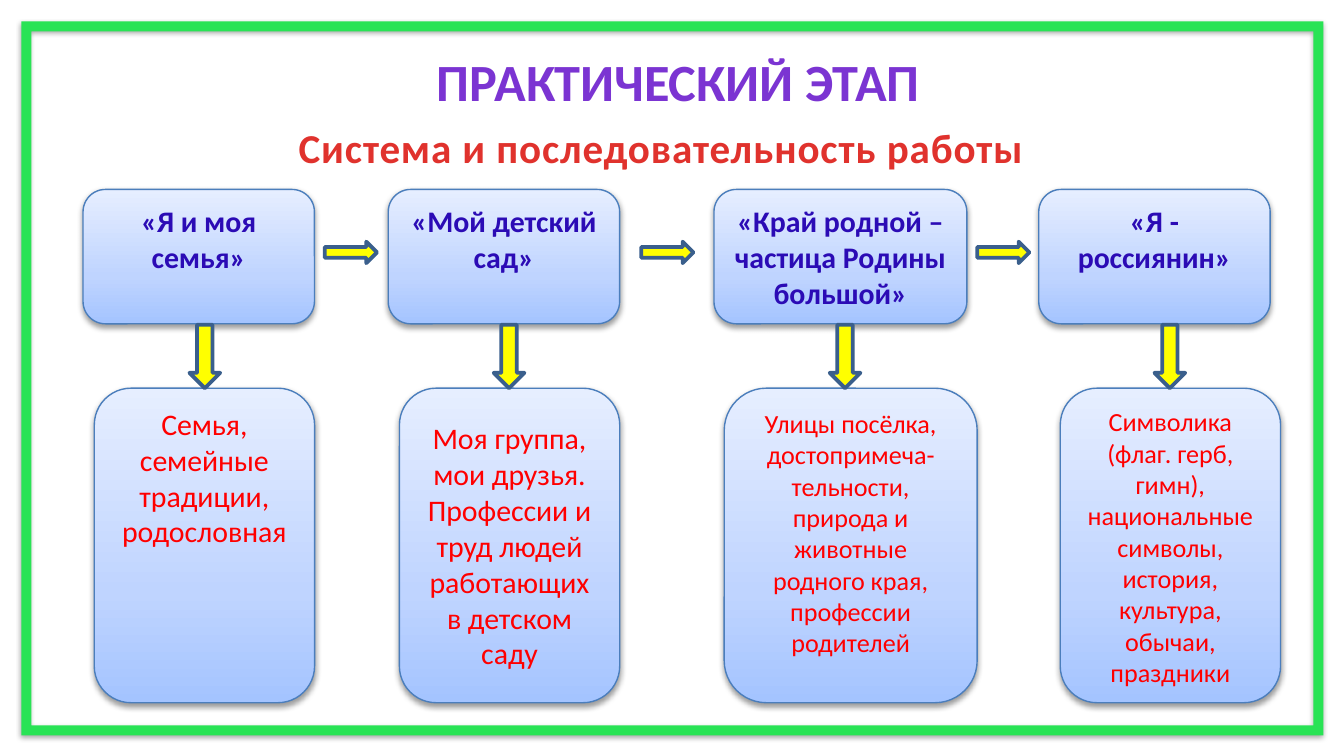
from copy import deepcopy
from dataclasses import dataclass

from lxml.etree import SubElement
from pptx import Presentation
from pptx.dml.color import RGBColor
from pptx.enum.shapes import MSO_SHAPE as Shape
from pptx.enum.text import MSO_ANCHOR as Anchor, MSO_AUTO_SIZE as AutoSize, PP_ALIGN as Align
from pptx.oxml.ns import qn
from pptx.util import Pt

PURPLE = RGBColor(0x7B, 0x34, 0xD2)
CRIMSON = RGBColor(0xE0, 0x32, 0x2D)
GREEN = RGBColor(0x29, 0xE3, 0x55)
INDIGO = RGBColor(0x2B, 0x0B, 0xB5)
RED = RGBColor(0xFF, 0x00, 0x00)
YELLOW = RGBColor(0xFF, 0xFF, 0x00)
ARROW_LINE = RGBColor(0x3A, 0x5F, 0x8C)
CARD_LINE = RGBColor(0x4B, 0x7E, 0xBC)
CARD_STOPS = (
    (0, RGBColor(0xA4, 0xC4, 0xFF)),
    (0.35, RGBColor(0xBF, 0xD4, 0xFF)),
    (1, RGBColor(0xE6, 0xEE, 0xFF)),
)
FONT = "Calibri"

THEME_TOP, THEME_HEIGHT = 101.5, 72
DETAIL_TOP, DETAIL_HEIGHT = 208, 168.5
DOWN_TOP, DOWN_WIDTH, DOWN_HEIGHT = 174, 16.5, 34
NEXT_TOP, NEXT_WIDTH, NEXT_HEIGHT = 129.5, 28, 11.5


@dataclass(frozen=True)
class Area:
    left: float
    top: float
    width: float
    height: float

    def lengths(self) -> tuple:
        return Pt(self.left), Pt(self.top), Pt(self.width), Pt(self.height)


@dataclass(frozen=True)
class Stage:
    theme: str
    theme_left: float
    theme_width: float
    detail: str
    detail_left: float
    detail_width: float
    detail_size: float
    down_left: float
    anchor: Anchor = Anchor.TOP


STAGES = (
    Stage("«Я и моя семья»", 44.5, 124,
          "Семья, семейные традиции, родословная", 50.5, 118, 16, 101.5),
    Stage("«Мой детский сад»", 208, 124,
          "Моя группа, мои друзья. Профессии и труд людей работающих в детском саду",
          214, 118, 16, 264.5, Anchor.MIDDLE),
    Stage("«Край родной – частица Родины большой»", 382.5, 135.5,
          "Улицы посёлка, достопримеча-тельности, природа и животные родного края, "
          "профессии родителей", 388, 135.5, 14, 444.5),
    Stage("«Я - россиянин»", 556.5, 124,
          "Символика (флаг. герб, гимн), национальные символы, история, культура, "
          "обычаи, праздники", 568, 118, 14, 618.5),
)
NEXT_LEFTS = (174, 343.5, 523.5)


def write(box, text: str, size: float, color: RGBColor, bold: bool = False,
          anchor: Anchor = Anchor.TOP):
    """Write one centred paragraph and return its run."""
    frame = box.text_frame
    frame.word_wrap = True
    frame.vertical_anchor = anchor
    para = frame.paragraphs[0]
    para.alignment = Align.CENTER
    span = para.add_run()
    span.text = text
    span.font.name = FONT
    span.font.size = Pt(size)
    span.font.bold = bold
    span.font.color.rgb = color
    return span


def add_shadow(shape, distance: float, opacity: int) -> None:
    shape.shadow.inherit = False
    effects = shape._element.spPr.find(qn("a:effectLst"))
    shadow = SubElement(effects, qn("a:outerShdw"), blurRad=str(Pt(3.1)),
                        dist=str(Pt(distance)), dir="5400000", rotWithShape="0")
    black = SubElement(shadow, qn("a:srgbClr"), val="000000")
    SubElement(black, qn("a:alpha"), val=str(opacity * 1000))


def add_frame(page) -> None:
    frame = page.shapes.add_shape(Shape.FRAME, *Area(11.5, 11.5, 697.5, 382.5).lengths())
    frame.adjustments[0] = 0.014
    frame.fill.solid()
    frame.fill.fore_color.rgb = GREEN
    frame.line.fill.background()
    add_shadow(frame, 1.8, 35)


def add_card(page, area: Area):
    card = page.shapes.add_shape(Shape.ROUNDED_RECTANGLE, *area.lengths())
    card.fill.gradient()
    card.fill.gradient_angle = 90
    stop_list = card._element.spPr.find(qn("a:gradFill")).find(qn("a:gsLst"))
    stop_list.append(deepcopy(stop_list[0]))
    for stop, (position, color) in zip(card.fill.gradient_stops, CARD_STOPS):
        stop.position = position
        stop.color.rgb = color
    card.line.color.rgb = CARD_LINE
    card.line.width = Pt(0.75)
    add_shadow(card, 1.6, 38)
    return card


def add_arrow(page, kind: Shape, area: Area) -> None:
    arrow = page.shapes.add_shape(kind, *area.lengths())
    arrow.shadow.inherit = False
    arrow.fill.solid()
    arrow.fill.fore_color.rgb = YELLOW
    arrow.line.color.rgb = ARROW_LINE
    arrow.line.width = Pt(2)


def add_headings(page) -> None:
    title = page.shapes.title
    title.left, title.top, title.width, title.height = Area(225, 22.5, 276.5, 41).lengths()
    write(title, "ПРАКТИЧЕСКИЙ ЭТАП", 28, PURPLE, bold=True)
    title.text_frame.word_wrap = False
    title.text_frame.auto_size = AutoSize.SHAPE_TO_FIT_TEXT

    subtitle = page.shapes.add_textbox(*Area(140.5, 62, 427.5, 34).lengths())
    span = write(subtitle, "Система и последовательность работы", 22, CRIMSON, bold=True)
    span.font._element.set("spc", "50")
    subtitle.text_frame.auto_size = AutoSize.SHAPE_TO_FIT_TEXT


def add_stage(page, stage: Stage) -> None:
    theme = add_card(page, Area(stage.theme_left, THEME_TOP, stage.theme_width, THEME_HEIGHT))
    write(theme, stage.theme, 16, INDIGO, bold=True)
    detail = add_card(page, Area(stage.detail_left, DETAIL_TOP,
                                 stage.detail_width, DETAIL_HEIGHT))
    write(detail, stage.detail, stage.detail_size, RED, anchor=stage.anchor)
    add_arrow(page, Shape.DOWN_ARROW,
              Area(stage.down_left, DOWN_TOP, DOWN_WIDTH, DOWN_HEIGHT))


def main() -> None:
    deck = Presentation()
    deck.slide_width, deck.slide_height = Pt(720), Pt(405)
    page = deck.slides.add_slide(deck.slide_layouts[5])
    add_frame(page)
    add_headings(page)
    for stage in STAGES:
        add_stage(page, stage)
    for left in NEXT_LEFTS:
        add_arrow(page, Shape.RIGHT_ARROW, Area(left, NEXT_TOP, NEXT_WIDTH, NEXT_HEIGHT))
    deck.save("out.pptx")


if __name__ == "__main__":
    main()
